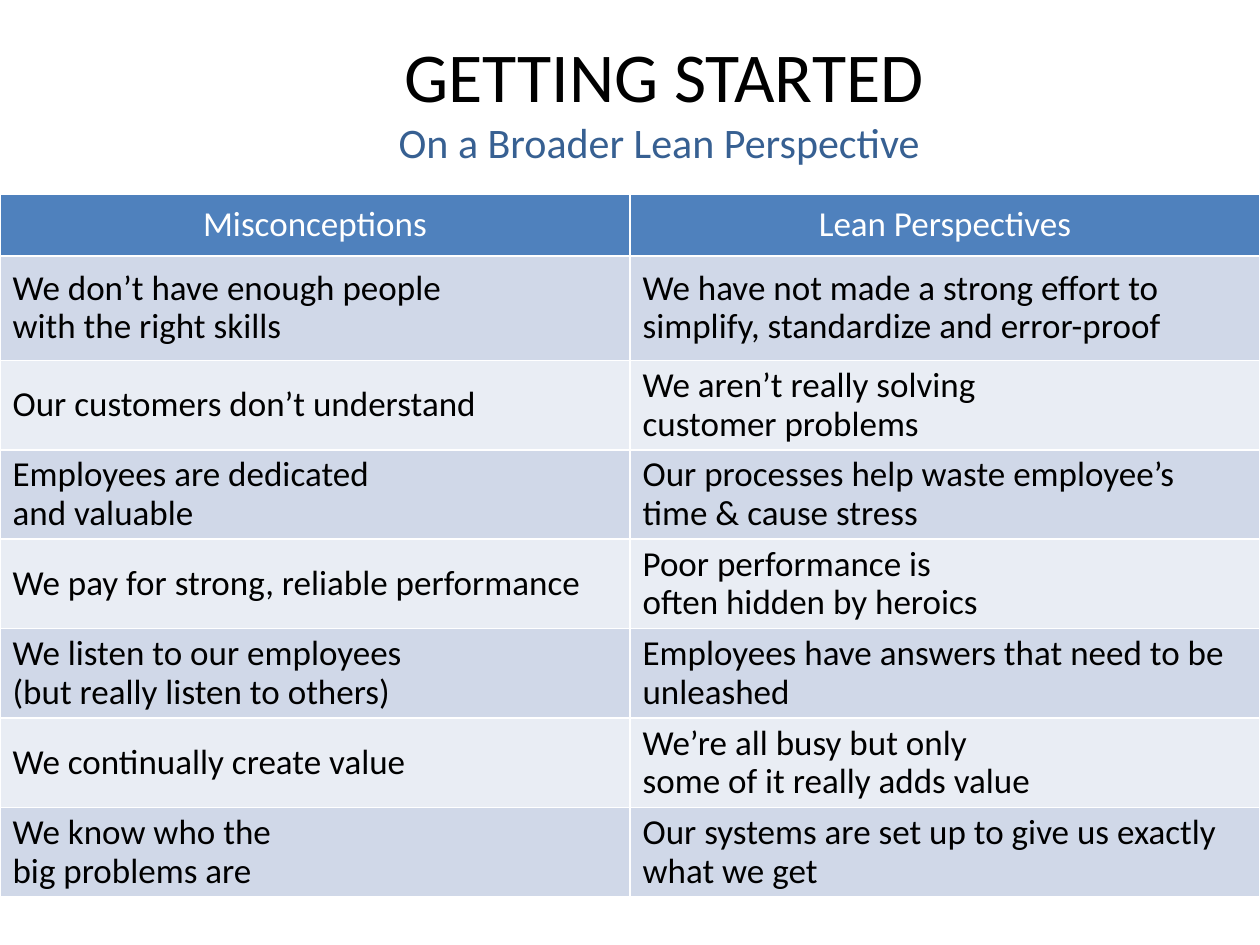
"""Build the slide that sets misconceptions beside lean perspectives."""
import pptx
import pptx.dml.color
import pptx.enum.text
import pptx.oxml
import pptx.oxml.ns
import pptx.util
from pptx.util import Inches

HEAD = ("Misconceptions", "Lean Perspectives")
ROWS = [
    ("We don’t have enough people \nwith the right skills",
     "We have not made a strong effort to simplify, standardize and error-proof"),
    ("Our customers don’t understand",
     "We aren’t really solving \ncustomer problems"),
    ("Employees are dedicated \nand valuable",
     "Our processes help waste employee’s time & cause stress"),
    ("We pay for strong, reliable performance",
     "Poor performance is \noften hidden by heroics"),
    ("We listen to our employees \n(but really listen to others)",
     "Employees have answers that need to be unleashed"),
    ("We continually create value",
     "We’re all busy but only \nsome of it really adds value"),
    ("We know who the \nbig problems are",
     "Our systems are set up to give us exactly what we get"),
]
HIGH = [0.49, 0.83] + [0.71] * 6
BLUE, BANDS = "4F81BD", ("D0D8E8", "E9EDF4")
ALIGN = pptx.enum.text.PP_ALIGN
MIDDLE = pptx.enum.text.MSO_ANCHOR.MIDDLE


def tint(code):
    return pptx.dml.color.RGBColor.from_string(code)


def write(para, text, size=20, color="000000", align=ALIGN.LEFT):
    para.alignment = align
    for i, line in enumerate(text.split("\n")):
        if i:
            para.add_line_break()
        if line:
            run = para.add_run()
            run.text = line
            run.font.name = "Calibri"
            run.font.size = pptx.util.Pt(size)
            run.font.bold = False
            run.font.color.rgb = tint(color)


def space(para):
    para.line_spacing = 0.9
    gap = pptx.oxml.parse_xml(
        f'<a:spcAft {pptx.oxml.ns.nsdecls("a")}><a:spcPct val="50000"/></a:spcAft>')
    para.line_spacing and para._p.pPr.append(gap)


def title(slide):
    box = slide.shapes.add_textbox(
        Inches(0.04), Inches(0.19), Inches(10.46), Inches(1.21))
    frame = box.text_frame
    frame.word_wrap = True
    frame.vertical_anchor = MIDDLE
    para = frame.paragraphs[0]
    write(para, "GETTING STARTED\n", size=40, align=ALIGN.CENTER)
    write(para, "On a Broader Lean Perspective ", size=24, color="376092",
          align=ALIGN.CENTER)


def table(slide):
    data = [HEAD] + ROWS
    grid = slide.shapes.add_table(
        len(data), len(HEAD), 0, Inches(1.54), Inches(10), Inches(sum(HIGH))).table
    for r, (texts, high) in enumerate(zip(data, HIGH)):
        grid.rows[r].height = Inches(high)
        for c, text in enumerate(texts):
            cell = grid.cell(r, c)
            cell.vertical_anchor = MIDDLE
            cell.fill.solid()
            cell.fill.fore_color.rgb = tint(BANDS[(r - 1) % 2] if r else BLUE)
            para = cell.text_frame.paragraphs[0]
            if r:
                write(para, text)
                space(para)
            else:
                write(para, text, color="FFFFFF", align=ALIGN.CENTER)


def main():
    deck = pptx.Presentation()
    deck.slide_width, deck.slide_height = Inches(10), Inches(7.5)
    slide = deck.slides.add_slide(deck.slide_layouts[6])
    title(slide)
    table(slide)
    deck.save("out.pptx")


if __name__ == "__main__":
    main()
